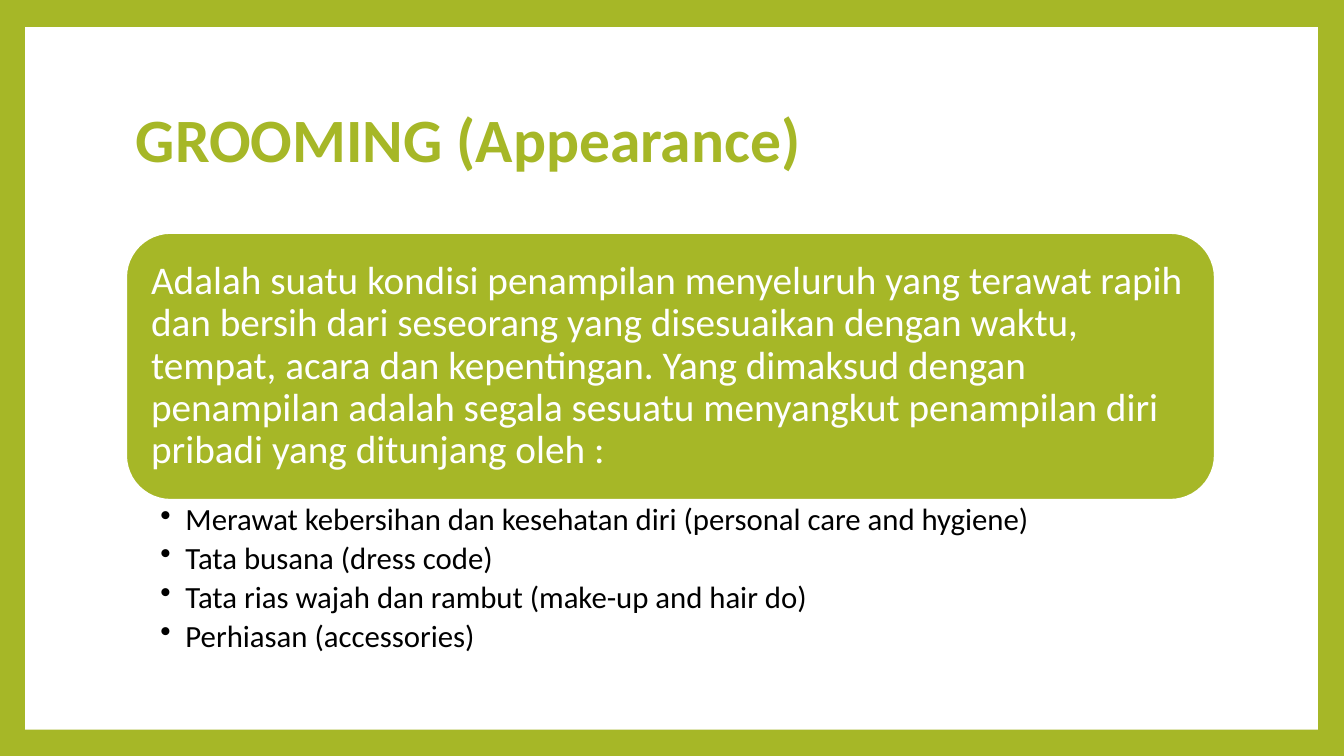
"""Build the grooming slide: a framed page with a title, a definition and a list."""
from lxml import etree
from pptx import Presentation, util as u
from pptx.dml.color import RGBColor
from pptx.enum import shapes, text
from pptx.oxml import ns

GREEN, WHITE, BLACK = "A6B727", "FFFFFF", "000000"
LEFT, WIDTH = 1.25, 10.8
DEFINITION = (
    "Adalah suatu kondisi penampilan menyeluruh yang terawat rapih dan bersih "
    "dari seseorang yang disesuaikan dengan waktu, tempat, acara dan kepentingan. "
    "Yang dimaksud dengan penampilan adalah segala sesuatu menyangkut penampilan "
    "diri pribadi yang ditunjang oleh :"
)
SUPPORTS = [
    "Merawat kebersihan dan kesehatan diri (personal care and hygiene)",
    "Tata busana (dress code)",
    "Tata rias wajah dan rambut (make-up and hair do)",
    "Perhiasan (accessories)",
]


def paint(color_fill, color):
    """Make a fill solid in the given hex colour."""
    color_fill.solid()
    color_fill.fore_color.rgb = RGBColor.from_string(color)


def add_panel(s, kind, box, color, line=None):
    """Add a filled shape without shadow, outlined only if a line colour is given."""
    sp = s.shapes.add_shape(kind, *map(u.Inches, box))
    sp.shadow.inherit = False
    paint(sp.fill, color)
    if line:
        paint(sp.line.fill, line)
        sp.line.width = u.Pt(1.5)
    else:
        sp.line.fill.background()
    return sp


def write(sp, lines, size, color, insets, anchor, bold=False, after=0):
    """Fill a shape with left-aligned paragraphs and return them."""
    tf = sp.text_frame
    tf.word_wrap = True
    tf.vertical_anchor = anchor
    tf.margin_left, tf.margin_top, tf.margin_right, tf.margin_bottom = map(u.Inches, insets)
    tf.text = "\n".join(lines)
    for p in tf.paragraphs:
        p.alignment = text.PP_ALIGN.LEFT
        p.line_spacing = 0.9
        p.space_after = u.Pt(after)
        p.font.name = "Calibri"
        p.font.size = u.Pt(size)
        p.font.bold = bold
        paint(p.font.fill, color)
    return tf.paragraphs


def add_bullet(p, indent):
    """Give a paragraph a round bullet with a hanging indent."""
    pPr = p._p.get_or_add_pPr()
    pPr.set("marL", str(u.Inches(indent)))
    pPr.set("indent", str(-u.Inches(indent)))
    bullet = etree.Element(ns.qn("a:buChar"), char="•")
    pPr.find(ns.qn("a:defRPr")).addprevious(bullet)


def add_text(s, box, *args, **kwargs):
    """Add a text box and return its written paragraphs."""
    return write(s.shapes.add_textbox(*map(u.Inches, box)), *args, **kwargs)


def main():
    """Build and save the slide."""
    prs = Presentation()
    prs.slide_width, prs.slide_height = u.Inches(13.33), u.Inches(7.5)
    s = prs.slides.add_slide(prs.slide_layouts[6])
    paint(s.background.fill, GREEN)
    kinds, anchors = shapes.MSO_SHAPE, text.MSO_ANCHOR

    add_panel(s, kinds.RECTANGLE, (0.25, 0.27, 12.82, 6.97), WHITE)
    add_text(s, (LEFT, 0.67, WIDTH, 1.48), ["GROOMING (Appearance)"], 44, GREEN,
             (0.1, 0.05, 0.1, 0.05), anchors.MIDDLE, bold=True)
    definition = add_panel(s, kinds.ROUNDED_RECTANGLE, (LEFT, 2.31, WIDTH, 2.65), GREEN, WHITE)
    write(definition, [DEFINITION], 28, WHITE, [0.12] * 4, anchors.MIDDLE)
    for p in add_text(s, (LEFT, 4.96, WIDTH, 1.65), SUPPORTS, 22, BLACK,
                      (0.34, 0.04, 0.22, 0.04), anchors.TOP, after=4):
        add_bullet(p, 0.25)

    prs.save("out.pptx")


if __name__ == "__main__":
    main()
